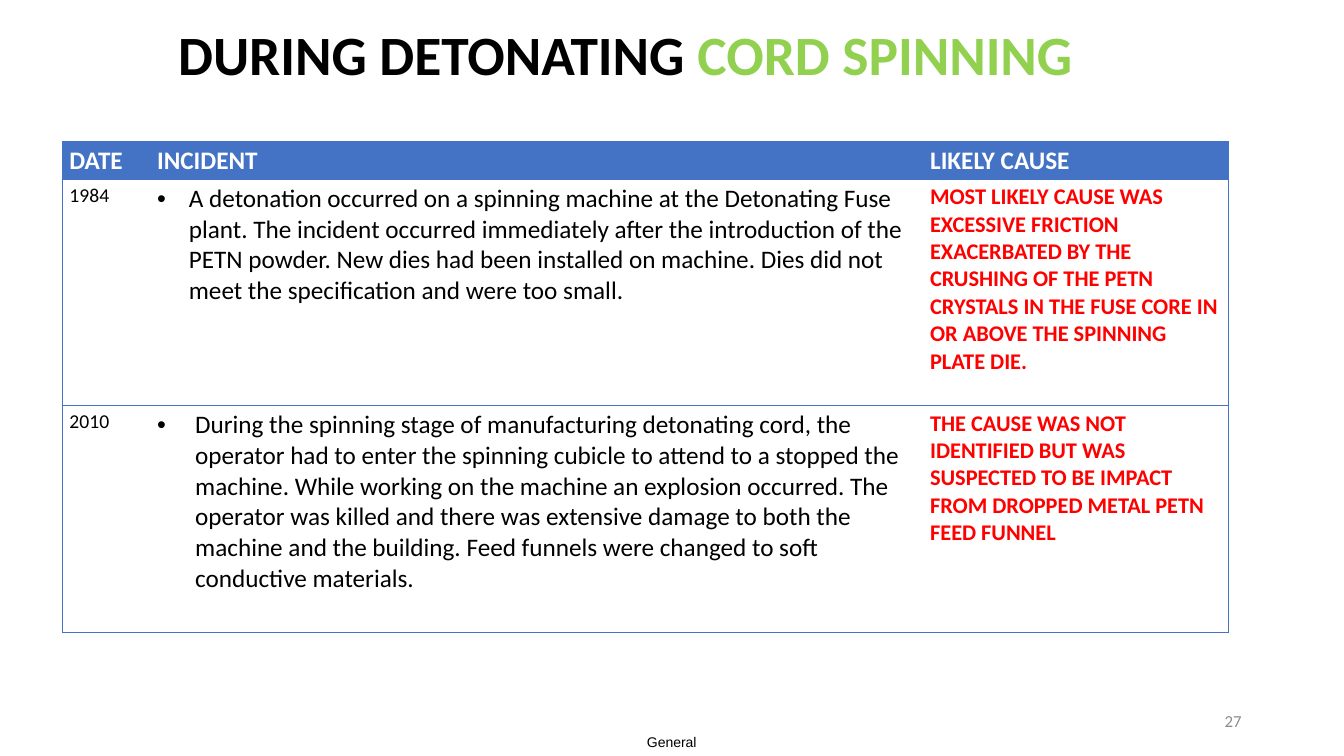
from lxml.etree import SubElement
from pptx import Presentation
from pptx.dml.color import RGBColor
from pptx.enum.text import MSO_ANCHOR as Anchor, PP_ALIGN as Align
from pptx.oxml.ns import qn
from pptx.util import Cm, Pt

BLACK = RGBColor(0, 0, 0)
WHITE = RGBColor(255, 255, 255)
GREEN = RGBColor(0x92, 0xD0, 0x50)
GRAY = RGBColor(0x8C, 0x8C, 0x8C)
BLUE = RGBColor(0x44, 0x72, 0xC4)
RED = RGBColor(255, 0, 0)


def add_run(para, text, size, color, bold=False, face="Calibri"):
    run = para.add_run()
    run.text = text
    font = run.font
    font.name, font.size, font.bold = face, Pt(size), bold
    font.color.rgb = color


def add_box(left, top, width, height, align, pad=(0.25, 0.13)):
    box = slide.shapes.add_textbox(Cm(left), Cm(top), Cm(width), Cm(height))
    frame = box.text_frame
    frame.word_wrap = True
    frame.vertical_anchor = Anchor.MIDDLE
    frame.margin_left = frame.margin_right = Cm(pad[0])
    frame.margin_top = frame.margin_bottom = Cm(pad[1])
    para = frame.paragraphs[0]
    para.alignment = align
    return para


deck = Presentation()
deck.slide_width, deck.slide_height = Cm(33.87), Cm(19.05)
slide = deck.slides.add_slide(deck.slide_layouts[6])

label = add_box(15.93, 18.36, 2, 0.69, Align.CENTER, (0, 0))
add_run(label, "General", 10, BLACK, face="Arial")

title = add_box(4.24, 0, 25.4, 2.92, Align.LEFT)
title.line_spacing = 0.9
add_run(title, "DURING DETONATING ", 39.6, BLACK, True)
add_run(title, "CORD SPINNING", 39.6, GREEN, True)

number = add_box(23.92, 17.65, 7.62, 1.02, Align.RIGHT)
add_run(number, "27", 12, GRAY)

rows = [
    ("DATE", "INCIDENT", "LIKELY CAUSE"),
    ("1984",
     "A detonation occurred on a spinning machine at the Detonating Fuse plant. "
     "The incident occurred immediately after the introduction of the PETN powder. "
     "New dies had been installed on machine. Dies did not meet the specification "
     "and were too small.",
     "MOST LIKELY CAUSE WAS EXCESSIVE FRICTION EXACERBATED BY THE CRUSHING OF THE "
     "PETN CRYSTALS IN THE FUSE CORE IN OR ABOVE THE SPINNING PLATE DIE."),
    ("2010",
     "During the spinning stage of manufacturing detonating cord, the operator had "
     "to enter the spinning cubicle to attend to a stopped the machine. While working "
     "on the machine an explosion occurred. The operator was killed and there was "
     "extensive damage to both the machine and the building. Feed funnels were "
     "changed to soft conductive materials.",
     "THE CAUSE WAS NOT IDENTIFIED BUT WAS SUSPECTED TO BE IMPACT FROM DROPPED "
     "METAL PETN FEED FUNNEL"),
]
widths = [2.21, 19.48, 7.7]
heights = [0.96, 5.7, 5.7]
looks = [(14, BLACK, False), (18, BLACK, False), (16, RED, True)]
indents = [0, 0.8, 0.96]

table = slide.shapes.add_table(
    3, 3, Cm(1.57), Cm(3.56), Cm(sum(widths)), Cm(sum(heights))).table
table.horz_banding = False
for col, width in zip(table.columns, widths):
    col.width = Cm(width)
for row, height in zip(table.rows, heights):
    row.height = Cm(height)

for r, texts in enumerate(rows):
    for c, text in enumerate(texts):
        cell = table.cell(r, c)
        cell.margin_left = cell.margin_right = Cm(0.18)
        cell.margin_top = cell.margin_bottom = Cm(0.1)

        props = cell._tc.get_or_add_tcPr()
        sides = {"lnL": c == 0, "lnR": c == 2, "lnT": True, "lnB": True}
        for side, shown in sides.items():
            line = SubElement(props, qn("a:" + side), w=str(Pt(0.5)))
            if shown:
                fill = SubElement(line, qn("a:solidFill"))
                SubElement(fill, qn("a:srgbClr"), val=str(BLUE))
            else:
                SubElement(line, qn("a:noFill"))

        para = cell.text_frame.paragraphs[0]
        if r == 0:
            cell.fill.solid()
            cell.fill.fore_color.rgb = BLUE
            add_run(para, text, 18, WHITE, True)
        else:
            cell.fill.background()
            add_run(para, text, *looks[c])
            if c == 1:
                form = para._p.get_or_add_pPr()
                form.set("marL", str(Cm(indents[r])))
                form.set("indent", str(-Cm(indents[r])))
                SubElement(form, qn("a:buFont"), typeface="Arial")
                SubElement(form, qn("a:buChar"), char="•")

deck.save("out.pptx")
